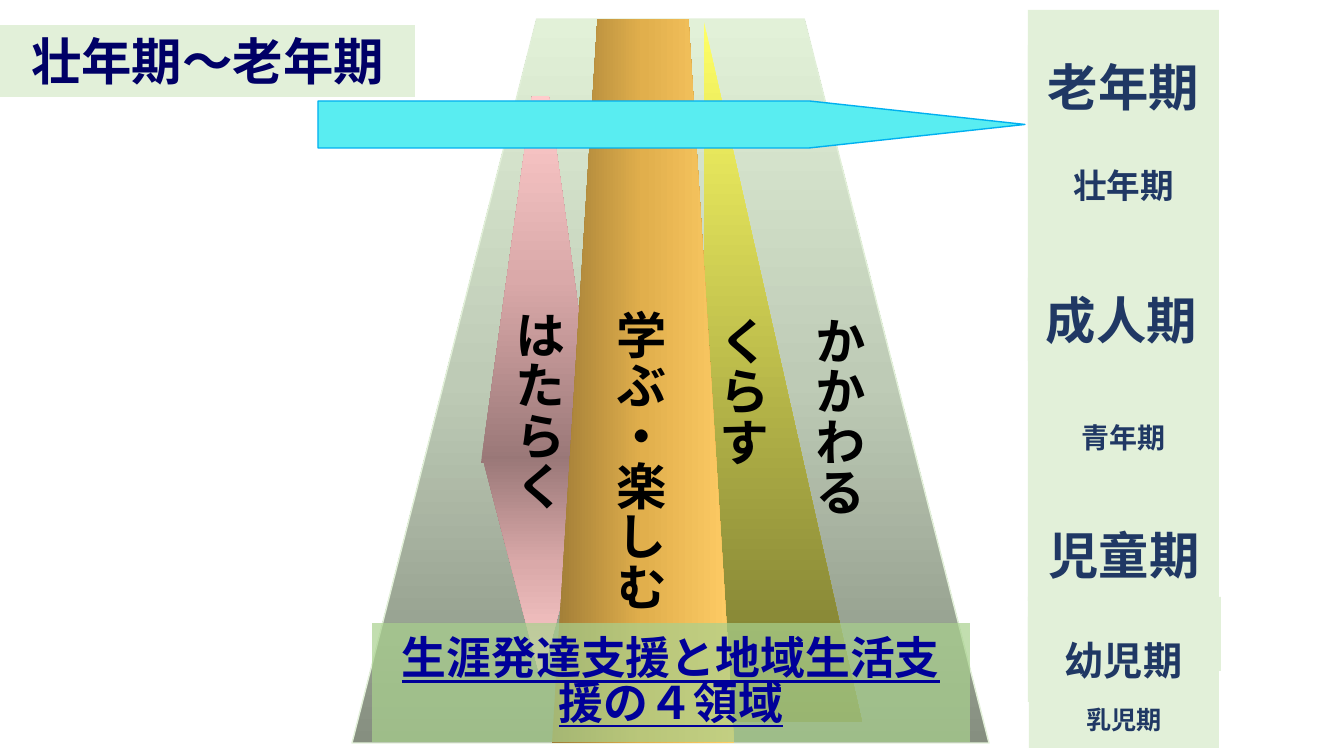
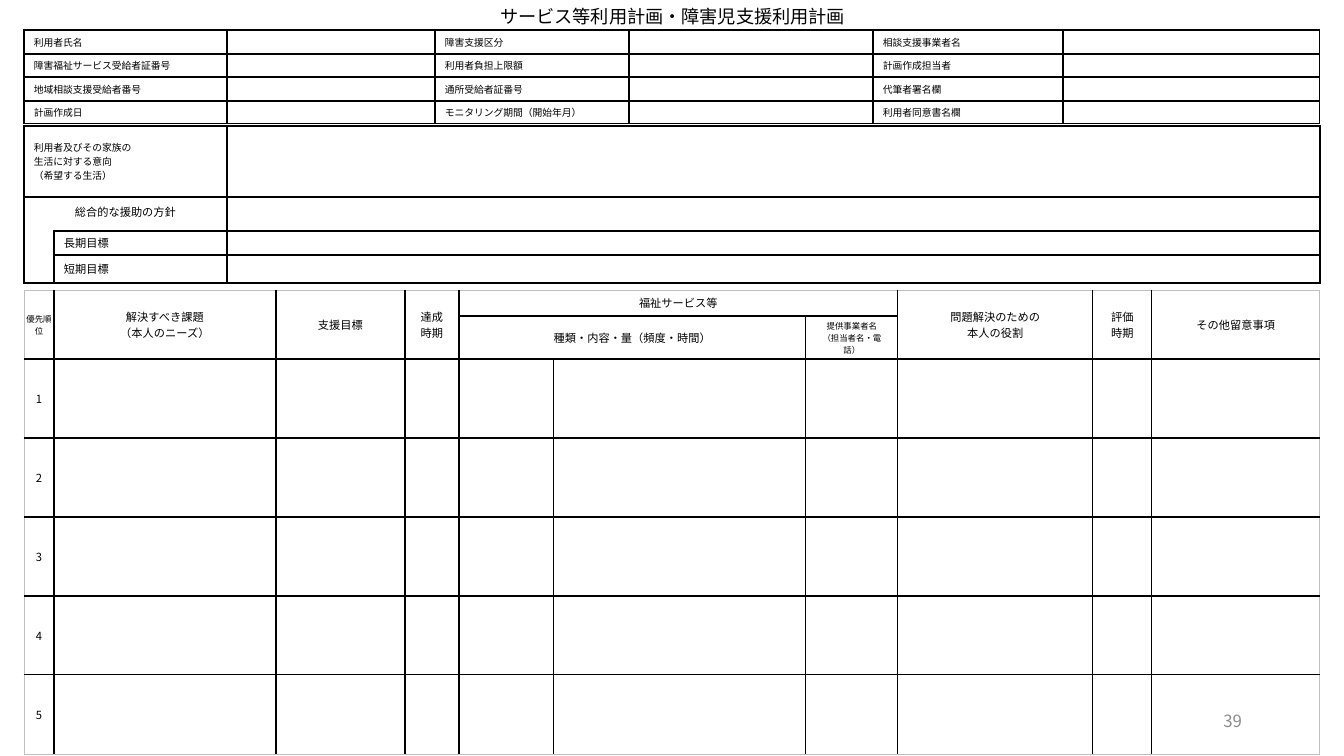
from lxml import etree
from pptx import Presentation
from pptx import util as u
from pptx.dml.color import RGBColor
from pptx.enum import shapes, text
from pptx.oxml.ns import qn

SCALE = 914400 / 100.8  # EMU per px
FONT = "Noto Sans CJK JP"
PALE_GREEN, NAVY, BLACK, GREY = "E2F0D9", "203864", "000000", "BFBFBF"
LEFT, CENTER, RIGHT = text.PP_ALIGN.LEFT, text.PP_ALIGN.CENTER, text.PP_ALIGN.RIGHT
TOP, MIDDLE = text.MSO_ANCHOR.TOP, text.MSO_ANCHOR.MIDDLE
KIND = shapes.MSO_SHAPE
PINK = ["997777", "DAA9A9", "FFCCCC"]


def px(length):
    return u.Emu(round(length * SCALE))


def colour(code):
    return RGBColor.from_string(code)


def element(parent, tag, **attributes):
    return etree.SubElement(parent, qn(tag), attributes)


def write(frame, words, size, tint=BLACK, bold=False, align=CENTER):
    """Fill a text frame, one paragraph for each line of words."""
    frame.text = words
    for para in frame.paragraphs:
        para.alignment = align
        para.font.size, para.font.bold, para.font.name = u.Pt(size), bold, FONT
        para.font.color.rgb = colour(tint)
        element(para._p.pPr.find(qn("a:defRPr")), "a:ea", typeface=FONT)
        if not para.runs:  # keeps empty cells from growing
            element(para._p, "a:endParaRPr", sz=str(size * 100))


def set_margins(holder, side, end):
    holder.margin_left = holder.margin_right = px(side)
    holder.margin_top = holder.margin_bottom = px(end)


def place(shape, box):
    shape.left, shape.top, shape.width, shape.height = map(px, box)


def prepare(frame, anchor):
    frame.word_wrap = True
    frame.auto_size = text.MSO_AUTO_SIZE.NONE
    frame.vertical_anchor = anchor
    set_margins(frame, 10, 5)


def add_title(page, box, words, size, tint=BLACK, bold=False, anchor=MIDDLE):
    title = page.shapes.title
    place(title, box)
    prepare(title.text_frame, anchor)
    write(title.text_frame, words, size, tint, bold)
    return title


def add_label(page, box, words, size, vertical=False, anchor=TOP, **style):
    label = page.shapes.add_textbox(*map(px, box))
    prepare(label.text_frame, anchor)
    write(label.text_frame, words, size, **style)
    if vertical:
        label.text_frame._txBody.bodyPr.set("vert", "eaVert")
    return label


def add_block(page, kind, box, fill, line=None, adjust=None):
    block = page.shapes.add_shape(kind, *map(px, box))
    block.shadow.inherit = False
    block.fill.solid()
    block.fill.fore_color.rgb = colour(fill)
    if line:
        block.line.color.rgb = colour(line)
        block.line.width = u.Pt(1)
    else:
        block.line.fill.background()
    if adjust is not None:
        block.adjustments[0] = adjust
    return block


def shade(block, stops, angle):
    """Spread evenly spaced colour stops; angle runs counterclockwise."""
    block.fill.gradient()
    block.fill.gradient_angle = angle
    stop_list = block._element.spPr.find(qn("a:gradFill")).find(qn("a:gsLst"))
    for old in list(stop_list):
        stop_list.remove(old)
    for index, code in enumerate(stops):
        position = 100000 * index // (len(stops) - 1)
        stop = element(stop_list, "a:gs", pos=str(position))
        element(stop, "a:srgbClr", val=code)


# Life-stage slide

def draw_areas(page, x, y):
    """Four areas of life support inside one tall trapezoid."""
    def area(kind, box, stops, angle, **look):
        left, top, width, height = box
        block = add_block(page, kind, (x + left, y + top, width, height), stops[0], **look)
        shade(block, stops, angle)
        return block

    def caption(left, top, height, words):
        add_label(page, (x + left, y + top, 82, height), words, 36, vertical=True, bold=True, align=LEFT)

    area(KIND.TRAPEZOID, (0, 0, 637, 724), ["868F80", "BECBB6", "E2F1D8"], 90,
         line=PALE_GREEN, adjust=0.29)
    area(KIND.RIGHT_TRIANGLE, (352, 3, 158, 700), ["FFFF66", "76762F"], 270)
    caption(349, 292, 238, "くらす")
    area(KIND.TRAPEZOID, (129, 77, 119, 367), PINK, 90, adjust=0.43)
    lower = area(KIND.TRAPEZOID, (130, 437, 118, 215), PINK, 90, adjust=0.48)
    lower._element.spPr.xfrm.set("flipV", "1")
    caption(145, 286, 255, "はたらく")
    caption(445, 292, 286, "かかわる")
    area(KIND.TRAPEZOID, (200, 0, 182, 724), ["9E7B36", "E1AF4C", "FFCC66"], 0)
    caption(246, 286, 403, "学ぶ・楽しむ")


def draw_stages(page, x, y):
    """Column of life stages, oldest at the top."""
    for top, width, height in [(0, 191, 591), (587, 193, 74)]:
        add_block(page, KIND.RECTANGLE, (x, y + top, width, height), PALE_GREEN)
    stages = [("老年期", 36, 0, 35, 191, 83), ("成人期", 36, 0, 268, 187, 83),
              ("壮年期", 24, 2, 146, 187, 59), ("乳児期", 18, 1, 681, 190, 57),
              ("青年期", 20, 2, 402, 188, 51), ("児童期", 36, 1, 503, 190, 83),
              ("幼児期", 28, 0, 607, 191, 85)]
    for words, size, left, top, width, height in stages:
        stage = add_block(page, KIND.RECTANGLE, (x + left, y + top, width, height), PALE_GREEN)
        prepare(stage.text_frame, MIDDLE)
        write(stage.text_frame, words, size, NAVY, bold=True)


def draw_banner(page, box):
    banner = add_block(page, KIND.RECTANGLE, box, "A9D18E")
    tint = banner._element.spPr.find(qn("a:solidFill"))[0]
    element(tint, "a:alpha", val="70000")
    frame = banner.text_frame
    prepare(frame, TOP)
    frame.margin_top = px(16)
    write(frame, "生涯発達支援と地域生活支援の４領域", 32, "000099", bold=True)
    frame.paragraphs[0].font.underline = True
    frame.paragraphs[0].line_spacing = 0.83


def build_life_stages(page):
    title = add_title(page, (0, 25, 415, 72), "壮年期～老年期", 36, "000066", True, TOP)
    title.fill.solid()
    title.fill.fore_color.rgb = colour(PALE_GREEN)
    draw_areas(page, 352, 19)
    draw_stages(page, 1028, 10)
    draw_banner(page, (372, 623, 598, 119))
    add_block(page, KIND.PENTAGON, (318, 101, 707, 47), "59EDF1", "00B0F0", 4.59)


# Plan form slide

def set_borders(cell, outer, frame):
    """Rule all four sides; sides on the table's edge take the frame colour."""
    for side in "LRTB":
        on_edge = side in outer
        thin = on_edge and frame != BLACK
        line = element(cell._tc.get_or_add_tcPr(), "a:ln" + side, w=str(u.Pt(0.5 if thin else 1)))
        fill = element(line, "a:solidFill")
        element(fill, "a:srgbClr", val=frame if on_edge else BLACK)


def add_grid(page, x, y, widths, heights, size, frame=BLACK):
    """Empty ruled table without a fill."""
    grid = page.shapes.add_table(len(heights), len(widths), px(x), px(y),
                                 px(sum(widths)), px(sum(heights))).table
    grid.first_row = grid.horz_banding = False
    for column, width in zip(grid.columns, widths):
        column.width = px(width)
    for row, height in zip(grid.rows, heights):
        row.height = px(height)
    for r in range(len(heights)):
        for c in range(len(widths)):
            cell = grid.cell(r, c)
            edges = {"L": c == 0, "R": c == len(widths) - 1, "T": r == 0, "B": r == len(heights) - 1}
            set_borders(cell, [side for side, here in edges.items() if here], frame)
            cell.fill.background()
            cell.vertical_anchor = MIDDLE
            set_margins(cell, 10, 2)
            write(cell.text_frame, "", size)
    return grid


def fill_cell(grid, row, column, words, size, align=CENTER, vertical=False):
    cell = grid.cell(row, column)
    write(cell.text_frame, words, size, align=align)
    if vertical:
        set_margins(cell, 2, 2)
        cell._tc.get_or_add_tcPr().set("vert", "eaVert")
    return cell


def draw_user_details(page, x, y):
    grid = add_grid(page, x, y, [203, 208, 194, 244, 190, 257], [24, 23, 24, 23], 7)
    rows = [("利用者氏名", "障害支援区分", "相談支援事業者名"),
            ("障害福祉サービス受給者証番号", "利用者負担上限額", "計画作成担当者"),
            ("地域相談支援受給者番号", "通所受給者証番号", "代筆者署名欄"),
            ("計画作成日", "モニタリング期間（開始年月）", "利用者同意書名欄")]
    for r, names in enumerate(rows):
        for c, name in enumerate(names):
            fill_cell(grid, r, 2 * c, name, 7, LEFT)


def draw_wishes_and_goals(page, x, y):
    grid = add_grid(page, x, y, [203, 1093], [71, 86], 8)
    fill_cell(grid, 0, 0, "利用者及びその家族の\n生活に対する意向\n（希望する生活）", 7, LEFT)
    policy = fill_cell(grid, 1, 0, "総合的な援助の方針", 8)
    policy.vertical_anchor = TOP
    policy.margin_top = px(6)
    # Goals nested under the policy
    goals = add_grid(page, x + 30, y + 105, [173, 1093], [24, 28], 8)
    for r, name in enumerate(["長期目標", "短期目標"]):
        fill_cell(goals, r, 0, name, 8, LEFT)


def draw_service_plan(page, x, y):
    grid = add_grid(page, x, y, [30, 222, 129, 54, 95, 252, 92, 195, 59, 168],
                    [26, 43] + [79] * 5, 8, GREY)
    # Headings over both header rows
    tall = {0: "優先順位", 1: "解決すべき課題\n（本人のニーズ）", 2: "支援目標", 3: "達成\n時期",
            7: "問題解決のための\n本人の役割", 8: "評価\n時期", 9: "その他留意事項"}
    for c, words in tall.items():
        grid.cell(0, c).merge(grid.cell(1, c))
        fill_cell(grid, 0, c, words, 8 if c else 6, vertical=c == 0)
    # Grouped service headings
    grid.cell(0, 4).merge(grid.cell(0, 6))
    grid.cell(1, 4).merge(grid.cell(1, 5))
    fill_cell(grid, 0, 4, "福祉サービス等", 8)
    fill_cell(grid, 1, 4, "種類・内容・量（頻度・時間）", 8)
    fill_cell(grid, 1, 6, "提供事業者名\n（担当者名・電話）", 6)
    # Priorities
    for rank in range(1, 6):
        fill_cell(grid, rank + 1, 0, str(rank), 8, vertical=True)


def build_plan_form(page):
    add_title(page, (341, 0, 663, 32), "サービス等利用計画・障害児支援利用計画", 13)
    draw_user_details(page, 24, 30)
    draw_wishes_and_goals(page, 24, 126)
    draw_service_plan(page, 24, 290)
    add_label(page, (950, 701, 302, 40), "39", 12, anchor=MIDDLE, tint="8C8C8C", align=RIGHT)


def main():
    deck = Presentation()
    deck.slide_width, deck.slide_height = px(1344), px(756)
    for build in (build_life_stages, build_plan_form):
        build(deck.slides.add_slide(deck.slide_layouts[5]))
    deck.save("out.pptx")


if __name__ == "__main__":
    main()
